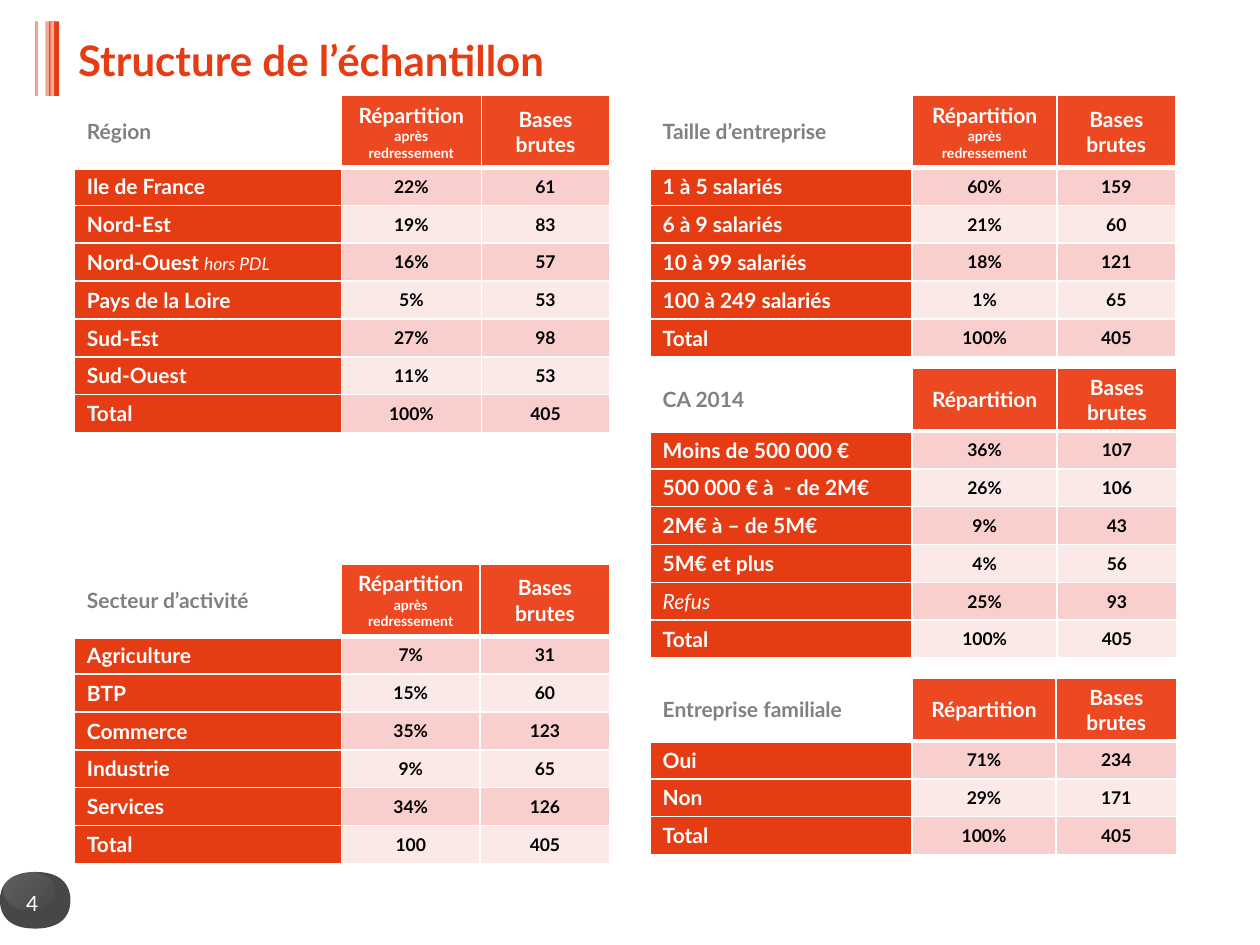
from lxml.etree import SubElement
from pptx import Presentation
from pptx.dml.color import RGBColor
from pptx.enum.shapes import MSO_SHAPE
from pptx.enum.text import MSO_ANCHOR, PP_ALIGN
from pptx.oxml.ns import qn
from pptx.util import Inches, Pt

RED, HEAD, PINK = "E63C14", "EC4822", "F4A795"
BANDS = ("F8CFCD", "FBE9E8")
WHITE, BLACK, GREY, DARK = "FFFFFF", "000000", "808080", "474747"
HEAD_TALL, HEAD_LOW, ROW = 0.57, 0.5, 0.3

AFTER = [("Répartition ", {}), ("après redressement", {"size": 8})]
SHARE = [("Répartition", {})]

# left, top, column widths, title, share heading, rows
TABLES = [
    (0.59, 0.76, (2.12, 1.11, 1.02), "Région", AFTER, [
        ("Ile de France", "22%", "61"),
        ("Nord-Est", "19%", "83"),
        ([("Nord-Ouest ", {}),
          ("hors PDL", {"size": 10, "bold": False, "italic": True})],
         "16%", "57"),
        ("Pays de la Loire", "5%", "53"),
        ("Sud-Est", "27%", "98"),
        ("Sud-Ouest", "11%", "53"),
        ("Total", "100%", "405")]),
    (0.59, 4.48, (2.12, 1.1, 1.03), "Secteur d’activité", AFTER, [
        ("Agriculture", "7%", "31"),
        ("BTP", "15%", "60"),
        ("Commerce", "35%", "123"),
        ("Industrie", "9%", "65"),
        ("Services", "34%", "126"),
        ("Total", "100", "405")]),
    (5.16, 0.76, (2.08, 1.15, 0.94), "Taille d’entreprise", AFTER, [
        ("1 à 5 salariés", "60%", "159"),
        ("6 à 9 salariés", "21%", "60"),
        ("10 à 99 salariés", "18%", "121"),
        ("100 à 249 salariés", "1%", "65"),
        ("Total", "100%", "405")]),
    (5.16, 2.92, (2.08, 1.15, 0.95), "CA 2014", SHARE, [
        ("Moins de 500 000 €", "36%", "107"),
        ("500 000 € à  - de 2M€", "26%", "106"),
        ("2M€ à – de 5M€", "9%", "43"),
        ("5M€ et plus", "4%", "56"),
        ([("Refus", {"bold": False, "italic": True})], "25%", "93"),
        ("Total", "100%", "405")]),
    (5.16, 5.38, (2.08, 1.14, 0.96), "Entreprise familiale", SHARE, [
        ("Oui", "71%", "234"),
        ("Non", "29%", "171"),
        ("Total", "100%", "405")]),
]


def color(code):
    return RGBColor.from_string(code)


def write(frame, words, size=12, ink=WHITE, bold=True, italic=False,
          align=PP_ALIGN.LEFT):
    """Fill a frame with a string or a list of (string, format) runs."""
    frame.word_wrap = True
    line = frame.paragraphs[0]
    line.alignment = align
    runs = [(words, {})] if isinstance(words, str) else words
    for part, extra in runs:
        look = {"size": size, "bold": bold, "italic": italic, **extra}
        run = line.add_run()
        run.text = part
        font = run.font
        font.name, font.size = "Lato", Pt(look["size"])
        font.bold, font.italic = look["bold"], look["italic"]
        font.color.rgb = color(ink)


def label(slide, box, words, inset=None, **look):
    shape = slide.shapes.add_textbox(*map(Inches, box))
    frame = shape.text_frame
    frame.vertical_anchor = MSO_ANCHOR.MIDDLE
    if inset is not None:
        frame.margin_left = frame.margin_right = Inches(inset)
        frame.margin_top = frame.margin_bottom = Inches(inset)
    write(frame, words, **look)


def paint(shape, code):
    shape.shadow.inherit = False
    shape.fill.solid()
    shape.fill.fore_color.rgb = color(code)
    shape.line.fill.background()


def edge(cell, top, bottom):
    """Draw white borders; top and bottom widths are in points."""
    props = cell._tc.get_or_add_tcPr()
    for side, width in (("L", 1), ("R", 1), ("T", top), ("B", bottom)):
        line = SubElement(props, qn(f"a:ln{side}"), w=str(Pt(width)))
        fill = SubElement(line, qn("a:solidFill"))
        SubElement(fill, qn("a:srgbClr"), val=WHITE)


def grid(slide, left, top, widths, title, share, rows):
    high = HEAD_TALL if share is AFTER else HEAD_LOW
    box = (left, top, sum(widths), high + ROW * len(rows))
    table = slide.shapes.add_table(len(rows) + 1, len(widths),
                                   *map(Inches, box)).table
    table.horz_banding = False
    for col, width in zip(table.columns, widths):
        col.width = Inches(width)
    for r, row in enumerate([(title, share, "Bases brutes"), *rows]):
        table.rows[r].height = Inches(ROW if r else high)
        for c, words in enumerate(row):
            cell = table.cell(r, c)
            cell.vertical_anchor = MSO_ANCHOR.MIDDLE
            edge(cell, 3 if r == 1 else 1, 1 if r else 3)
            if r == 0 and c == 0:
                cell.fill.background()
            else:
                cell.fill.solid()
                cell.fill.fore_color.rgb = color(
                    HEAD if r == 0 else RED if c == 0 else BANDS[(r - 1) % 2])
            ink = BLACK if r and c else GREY if r == c else WHITE
            write(cell.text_frame, words, size=10 if r and c else 12, ink=ink,
                  align=PP_ALIGN.CENTER if c else PP_ALIGN.LEFT)


def header(slide, left, top, width, height):
    # Vertical bars: offset, width, colour
    for shift, wide, code in ((0, 0.01, RED), (0.11, 0.08, RED),
                              (0, 0.02, PINK), (0.12, 0.03, PINK),
                              (0.08, 0.03, PINK)):
        bar = slide.shapes.add_shape(
            MSO_SHAPE.ROUND_1_RECTANGLE,
            *map(Inches, (left + shift, top, wide, height)))
        bar.adjustments[0] = 0
        paint(bar, code)
    label(slide, (left + 0.34, top + 0.09, width - 0.34, 0.42),
          "Structure de l’échantillon", inset=0, size=24, ink=RED)


def badge(slide, left, top, width, height):
    # Rounded pebble: one quarter curve, mirrored around the centre
    steps = 12
    arc = []
    for i in range(steps):
        t = i / steps
        u = 1 - t
        arc.append((u**3 + 3 * u * u * t + 3 * u * t * t * 0.54,
                    3 * u * u * t * 0.74 + 3 * u * t * t + t**3))
    ring = []
    for _ in range(4):
        ring += arc
        arc = [(-y, x) for x, y in arc]
    spots = [(Inches(left + width / 2 * (1 + x)),
              Inches(top + height / 2 * (1 + y))) for x, y in ring]
    path = slide.shapes.build_freeform(*spots[0])
    path.add_line_segments(spots[1:])
    paint(path.convert_to_shape(), DARK)

    # Soft highlight
    shine = slide.shapes.add_shape(
        MSO_SHAPE.OVAL, *map(Inches, (left + 0.03, top, 0.4, 0.3)))
    paint(shine, WHITE)
    shine.fill.gradient()
    shine.fill.gradient_angle = 315
    for stop, alpha in zip(shine.fill.gradient_stops, (15, 0)):
        stop.color.rgb = color(WHITE)
        tint = stop.color._xFill.find(qn("a:srgbClr"))
        SubElement(tint, qn("a:alpha"), val=str(alpha * 1000))

    # Page number
    label(slide, (left - 0.12, top + 0.05, 0.75, 0.4), "4", bold=False,
          align=PP_ALIGN.CENTER)


def main():
    deck = Presentation()
    deck.slide_width, deck.slide_height = Inches(10), Inches(7.5)
    slide = deck.slides.add_slide(deck.slide_layouts[6])
    badge(slide, 0, 6.92, 0.56, 0.45)
    header(slide, 0.28, 0.17, 9.13, 0.59)
    for spec in TABLES:
        grid(slide, *spec)
    deck.save("out.pptx")


if __name__ == "__main__":
    main()
